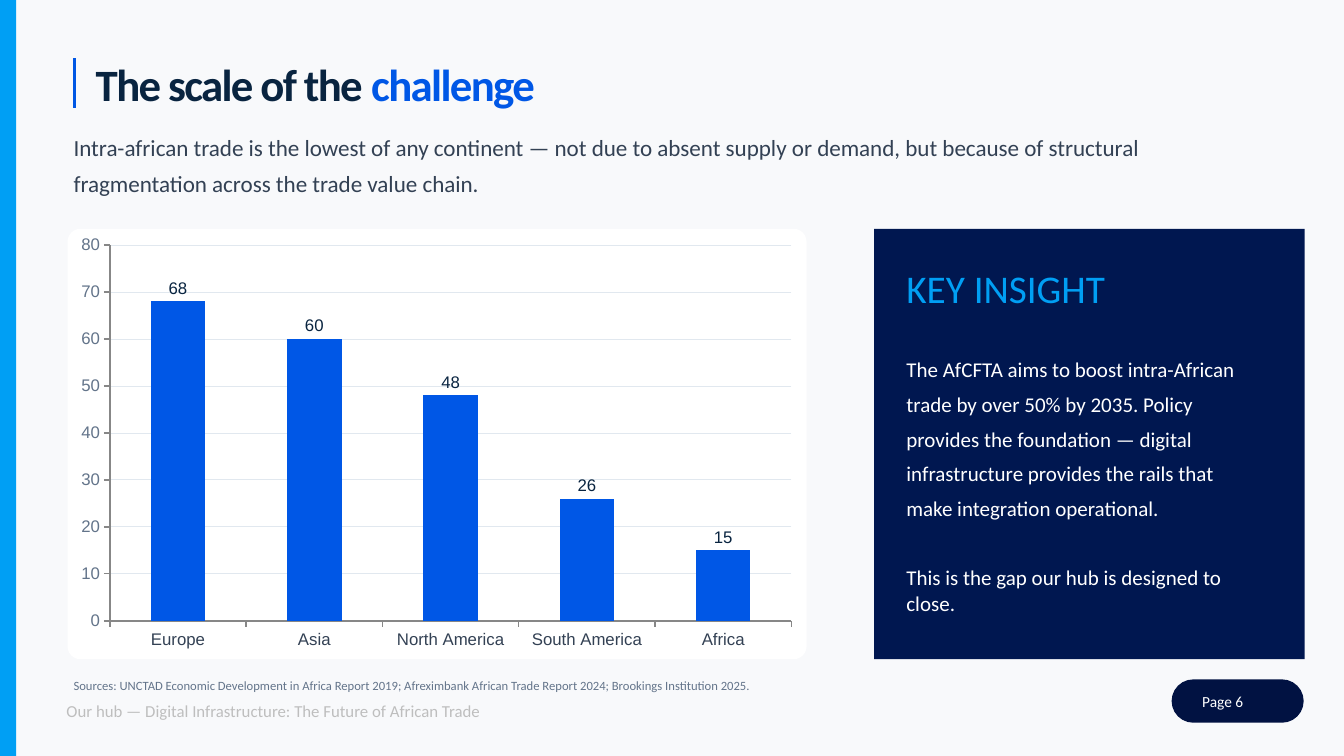
"""Build the slide on the scale of the intra-African trade challenge."""
import pptx
import pptx.chart.data
import pptx.dml.color
import pptx.enum.chart
import pptx.enum.shapes
import pptx.enum.text
import pptx.oxml
import pptx.util
from pptx.util import Inches, Pt

SHAPES = pptx.enum.shapes.MSO_SHAPE
NAVY = "092440"
BLUE = "0057E6"
SKY = "009FF4"
SLATE = "334154"
GREY = "63748A"
WHITE = "FFFFFF"
AXIS = "878787"


def rgb(value):
    """Turn a hex string into a colour."""
    return pptx.dml.color.RGBColor.from_string(value)


def add_block(slide, kind, box, fill):
    """Add a plain filled shape."""
    block = slide.shapes.add_shape(kind, *map(Inches, box))
    block.shadow.inherit = False
    block.fill.solid()
    block.fill.fore_color.rgb = rgb(fill)
    block.line.fill.background()
    return block


def prepare_frame(frame, left=0, top=0, right=0):
    """Set wrapping, top anchor and insets in inches."""
    frame.word_wrap = True
    frame.vertical_anchor = pptx.enum.text.MSO_ANCHOR.TOP
    frame.margin_left, frame.margin_top = Inches(left), Inches(top)
    frame.margin_right, frame.margin_bottom = Inches(right), 0


def write(paragraph, runs, size, bold=False, tracking=0, leading=1, before=0):
    """Write left-aligned (text, colour) runs into a paragraph."""
    paragraph.alignment = pptx.enum.text.PP_ALIGN.LEFT
    paragraph.line_spacing = leading
    if before:
        paragraph.space_before = Pt(before)
    for words, colour in runs:
        run = paragraph.add_run()
        run.text = words
        run.font.name = "Calibri"
        run.font.size = Pt(size)
        run.font.bold = bold
        run.font.color.rgb = rgb(colour)
        if tracking:
            run.font._element.set("spc", str(round(tracking * 100)))


def add_text(slide, box, runs, size, **style):
    """Add a one-paragraph text box."""
    frame = slide.shapes.add_textbox(*map(Inches, box)).text_frame
    prepare_frame(frame)
    write(frame.paragraphs[0], runs, size, **style)


def add_rule(slide, start, end, colour, width):
    """Add a straight line without a shadow."""
    rule = slide.shapes.add_connector(
        pptx.enum.shapes.MSO_CONNECTOR.STRAIGHT, *map(Inches, start + end))
    rule.line.color.rgb = rgb(colour)
    rule.line.width = Pt(width)
    rule._element.spPr.append(pptx.oxml.parse_xml(
        '<a:effectLst xmlns:a="http://schemas.openxmlformats.org/drawingml/2006/main"/>'))


def style_font(font, colour):
    """Set the chart lettering."""
    font.name = "Arial"
    font.size = Pt(12)
    font.color.rgb = rgb(colour)


def style_axis(axis, colour):
    """Set the axis line, ticks and labels."""
    axis.format.line.color.rgb = rgb(AXIS)
    axis.format.line.width = Pt(1)
    axis.major_tick_mark = pptx.enum.chart.XL_TICK_MARK.OUTSIDE
    style_font(axis.tick_labels.font, colour)


def place_plot(chart, x, y, w, h):
    """Fix the inner plot area as fractions of the chart."""
    area = chart._chartSpace.chart.plotArea
    for layout in area.findall(pptx.oxml.ns.qn("c:layout")):
        area.remove(layout)
    area.insert(0, pptx.oxml.parse_xml(
        '<c:layout xmlns:c="http://schemas.openxmlformats.org/drawingml/2006/chart">'
        '<c:manualLayout><c:layoutTarget val="inner"/>'
        '<c:xMode val="edge"/><c:yMode val="edge"/>'
        f'<c:x val="{x:.4f}"/><c:y val="{y:.4f}"/><c:w val="{w:.4f}"/><c:h val="{h:.4f}"/>'
        '</c:manualLayout></c:layout>'))


def add_trade_chart(slide, box):
    """Add the column chart of trade share by continent."""
    shares = pptx.chart.data.CategoryChartData()
    shares.categories = ["Europe", "Asia", "North America", "South America", "Africa"]
    shares.add_series("Intra-continental trade", (68, 60, 48, 26, 15))
    chart = slide.shapes.add_chart(
        pptx.enum.chart.XL_CHART_TYPE.COLUMN_CLUSTERED, *map(Inches, box), shares).chart
    chart.has_legend = False
    chart.has_title = False
    style_font(chart.font, NAVY)
    columns = chart.plots[0]
    columns.vary_by_categories = False
    columns.gap_width = 150
    columns.series[0].format.fill.solid()
    columns.series[0].format.fill.fore_color.rgb = rgb(BLUE)
    columns.has_data_labels = True
    columns.data_labels.show_value = True
    columns.data_labels.position = pptx.enum.chart.XL_LABEL_POSITION.OUTSIDE_END
    style_font(columns.data_labels.font, NAVY)
    style_axis(chart.category_axis, SLATE)
    values = chart.value_axis
    style_axis(values, GREY)
    values.minimum_scale, values.maximum_scale, values.major_unit = 0, 80, 10
    values.major_gridlines.format.line.color.rgb = rgb("E1E8EF")
    values.major_gridlines.format.line.width = Pt(0.5)
    left, top, width, height = box
    place_plot(chart, (1.09 - left) / width, (2.43 - top) / height,
               6.76 / width, 3.73 / height)


def add_insight(slide, box):
    """Add the key insight panel."""
    frame = add_block(slide, SHAPES.RECTANGLE, box, "001750").text_frame
    prepare_frame(frame, 0.32, 0.35, 0.55)
    write(frame.paragraphs[0], [("KEY INSIGHT", SKY)], 28)
    write(frame.add_paragraph(), [(
        "The AfCFTA aims to boost intra-African trade by over 50% by 2035. "
        "Policy provides the foundation — digital infrastructure provides "
        "the rails that make integration operational.", WHITE)],
        15, leading=1.38, before=25.6)
    write(frame.add_paragraph(), [(
        "This is the gap our hub is designed to close.", WHITE)], 15, before=31.5)


def add_page_pill(slide, box):
    """Add the page number pill."""
    pill = add_block(slide, SHAPES.ROUNDED_RECTANGLE, box, "011242")
    pill.adjustments[0] = 0.5
    prepare_frame(pill.text_frame, 0.24)
    pill.text_frame.vertical_anchor = pptx.enum.text.MSO_ANCHOR.MIDDLE
    write(pill.text_frame.paragraphs[0], [("Page 6", WHITE)], 11)


def main():
    """Compose and save the slide."""
    deck = pptx.Presentation()
    deck.slide_width, deck.slide_height = Inches(13.33), Inches(7.5)
    slide = deck.slides.add_slide(deck.slide_layouts[6])
    slide.background.fill.solid()
    slide.background.fill.fore_color.rgb = rgb("F8F9FB")
    add_block(slide, SHAPES.RECTANGLE, (0, 0, 0.16, 7.5), SKY)

    add_rule(slide, (0.74, 0.58), (0.74, 1.07), "0057E4", 1.75)
    add_text(slide, (0.95, 0.56, 11.5, 0.55),
             [("The scale of the ", NAVY), ("challenge", BLUE)],
             32, bold=True, tracking=-1.2)
    add_text(slide, (0.73, 1.24, 10.73, 0.75), [(
        "Intra-african trade is the lowest of any continent — not due to absent "
        "supply or demand, but because of structural fragmentation across the "
        "trade value chain.", SLATE)], 16.5, leading=1.31)

    chart_box = (0.67, 2.27, 7.33, 4.27)
    card = add_block(slide, SHAPES.ROUNDED_RECTANGLE, chart_box, WHITE)
    card.adjustments[0] = 0.03
    add_trade_chart(slide, chart_box)
    add_insight(slide, (8.67, 2.27, 4.27, 4.27))

    add_text(slide, (0.73, 6.73, 7, 0.2), [(
        "Sources: UNCTAD Economic Development in Africa Report 2019; Afreximbank "
        "African Trade Report 2024; Brookings Institution 2025.", GREY)], 9)
    add_text(slide, (0.66, 6.95, 7, 0.22), [(
        "Our hub — Digital Infrastructure: The Future of African Trade", "BEBEBE")], 12)
    add_page_pill(slide, (11.62, 6.74, 1.31, 0.43))
    deck.save("out.pptx")


if __name__ == "__main__":
    main()
